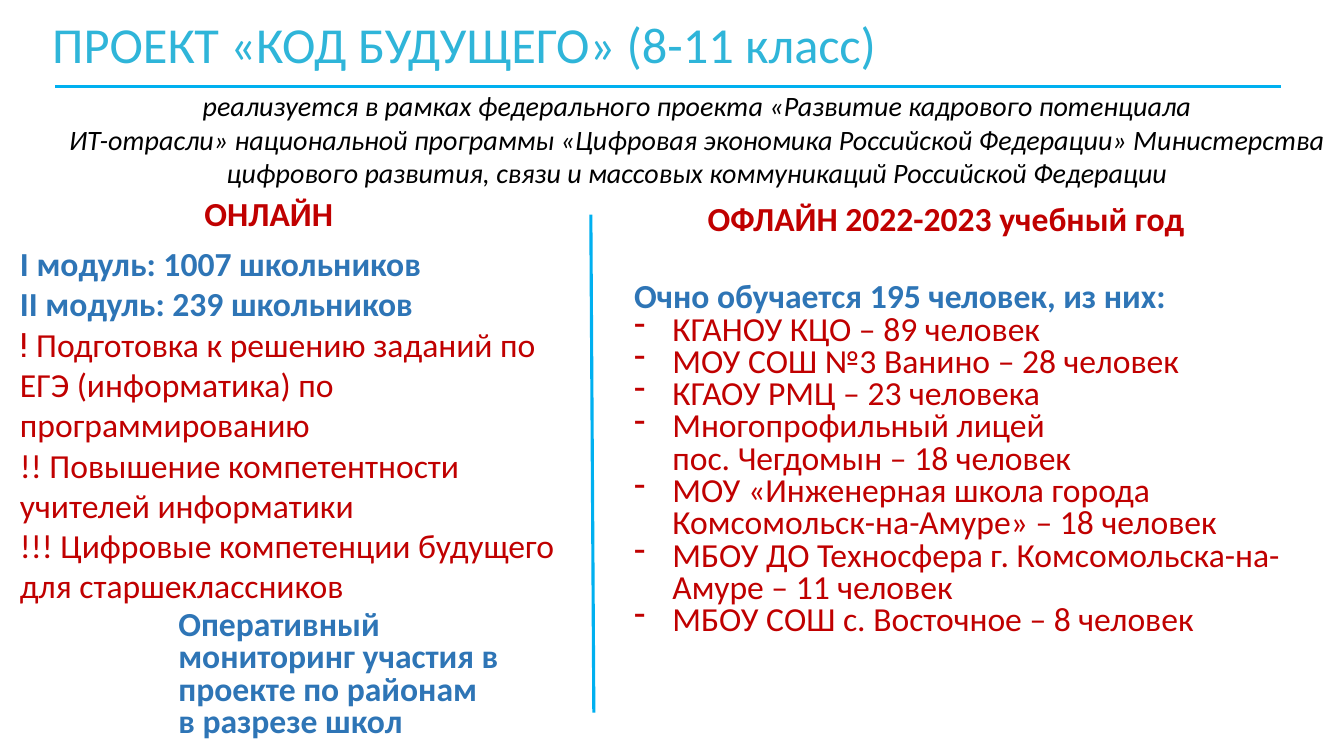
from dataclasses import dataclass

import pptx
import pptx.dml.color
import pptx.enum.shapes
import pptx.enum.text
import pptx.oxml
import pptx.util
from pptx.util import Inches


@dataclass(frozen=True)
class Theme:
    font: str = "Calibri"
    mark_font: str = "Roboto Slab"
    title_color: str = "2FB5D9"
    blue: str = "2E75B6"
    red: str = "C00000"
    black: str = "000000"
    line: str = "00B0F0"
    title_size: int = 36
    subtitle_size: int = 20
    body_size: int = 24
    line_width: float = 2.25
    tight: float = 0.8
    hanging: float = 0.38


THEME = Theme()
ALIGN = pptx.enum.text.PP_ALIGN


def style(paragraph, color, size=THEME.body_size, bold=False, italic=False):
    for run in paragraph.runs:
        font = run.font
        font.name = THEME.font
        font.size = pptx.util.Pt(size)
        font.bold = bold
        font.italic = italic
        font.color.rgb = pptx.dml.color.RGBColor.from_string(color)


def add_text(slide, box, lines, color, spacing=None, align=None, **font):
    """Add a wrapped text box with one paragraph per line and return its paragraphs."""
    text_box = slide.shapes.add_textbox(*(Inches(value) for value in box))
    text_frame = text_box.text_frame
    text_frame.word_wrap = True
    text_frame.text = "\n".join(lines)
    for paragraph in text_frame.paragraphs:
        paragraph.line_spacing = spacing
        paragraph.alignment = align
        style(paragraph, color, **font)
    return text_frame.paragraphs


def add_line(slide, start, end):
    connector = slide.shapes.add_connector(
        pptx.enum.shapes.MSO_CONNECTOR.STRAIGHT,
        *(Inches(value) for value in start + end))
    connector.line.color.rgb = pptx.dml.color.RGBColor.from_string(THEME.line)
    connector.line.width = pptx.util.Pt(THEME.line_width)
    properties = connector.element.spPr
    properties.append(properties.makeelement(pptx.oxml.ns.qn("a:effectLst"), {}))


def indent(paragraph, bullet):
    """Indent a list paragraph, hanging a dash in front of it if asked."""
    properties = paragraph._p.get_or_add_pPr()
    properties.set("marL", str(Inches(THEME.hanging)))
    if bullet:
        properties.set("indent", str(-Inches(THEME.hanging)))
        dash = properties.makeelement(pptx.oxml.ns.qn("a:buChar"), {"char": "-"})
        properties.append(dash)


def add_header(slide, left, top):
    add_text(slide, (left, top, 13, 0.6), ["ПРОЕКТ «КОД БУДУЩЕГО» (8-11 класс)"],
             THEME.title_color, THEME.tight, size=THEME.title_size)
    line_left, line_top = left + 0.13, top + 0.66
    add_line(slide, (line_left, line_top), (line_left + 12.16, line_top))
    add_text(slide, (line_left, line_top - 0.03, 12.73, 1.11), [
        "реализуется в рамках федерального проекта «Развитие кадрового потенциала",
        "ИТ-отрасли» национальной программы «Цифровая экономика Российской Федерации» "
        "Министерства цифрового развития, связи и массовых коммуникаций Российской Федерации",
    ], THEME.black, align=ALIGN.CENTER, size=THEME.subtitle_size, italic=True)


def add_online_column(slide, left, top, width):
    add_text(slide, (left + 1.83, top, 2.24, 0.5), ["ОНЛАЙН"], THEME.red, bold=True)
    paragraphs = add_text(slide, (left, top + 0.5, width, 3.76), [
        "I модуль: 1007 школьников",
        "II модуль: 239 школьников",
        "! ",
        "!! Повышение компетентности учителей информатики",
        "!!! Цифровые компетенции будущего для старшеклассников",
    ], THEME.red)
    for module in paragraphs[:2]:
        style(module, THEME.blue, bold=True)
    for goal in paragraphs[2:]:
        goal.line_spacing = pptx.util.Pt(28.8)
    exam_goal = paragraphs[2]
    exam_goal.add_run().text = (
        "Подготовка к решению заданий по ЕГЭ (информатика) по программированию")
    style(exam_goal, THEME.red)
    exam_goal.runs[0].font.name = THEME.mark_font
    add_text(slide, (left + 1.57, top + 4.15, 4.09, 1.39), [
        "Оперативный",
        "мониторинг участия в проекте по районам",
        "в разрезе школ",
    ], THEME.blue, THEME.tight, bold=True)


def add_offline_column(slide, left, top, width):
    add_text(slide, (left + 0.73, top, 5.68, 0.5), ["ОФЛАЙН 2022-2023 учебный год"],
             THEME.red, bold=True)
    continuation = "пос. Чегдомын – 18 человек"
    heading, *schools = add_text(slide, (left, top + 0.77, width, 3.74), [
        "Очно обучается 195 человек, из них:",
        "КГАНОУ КЦО – 89 человек",
        "МОУ СОШ №3 Ванино – 28 человек",
        "КГАОУ РМЦ – 23 человека",
        "Многопрофильный лицей",
        continuation,
        "МОУ «Инженерная школа города Комсомольск-на-Амуре» – 18 человек",
        "МБОУ ДО Техносфера г. Комсомольска-на-Амуре – 11 человек",
        "МБОУ СОШ с. Восточное – 8 человек",
    ], THEME.red, THEME.tight)
    heading.line_spacing = None
    style(heading, THEME.blue, bold=True)
    for school in schools:
        indent(school, bullet=school.text != continuation)


def main():
    presentation = pptx.Presentation()
    presentation.slide_width = Inches(13.33)
    presentation.slide_height = Inches(7.5)
    slide = presentation.slides.add_slide(presentation.slide_layouts[6])
    add_header(slide, 0.42, 0.2)
    add_online_column(slide, 0.1, 1.86, 5.77)
    add_line(slide, (5.89, 7.07), (5.86, 2.13))
    add_offline_column(slide, 6.19, 1.91, 6.94)
    presentation.save("out.pptx")


if __name__ == "__main__":
    main()
